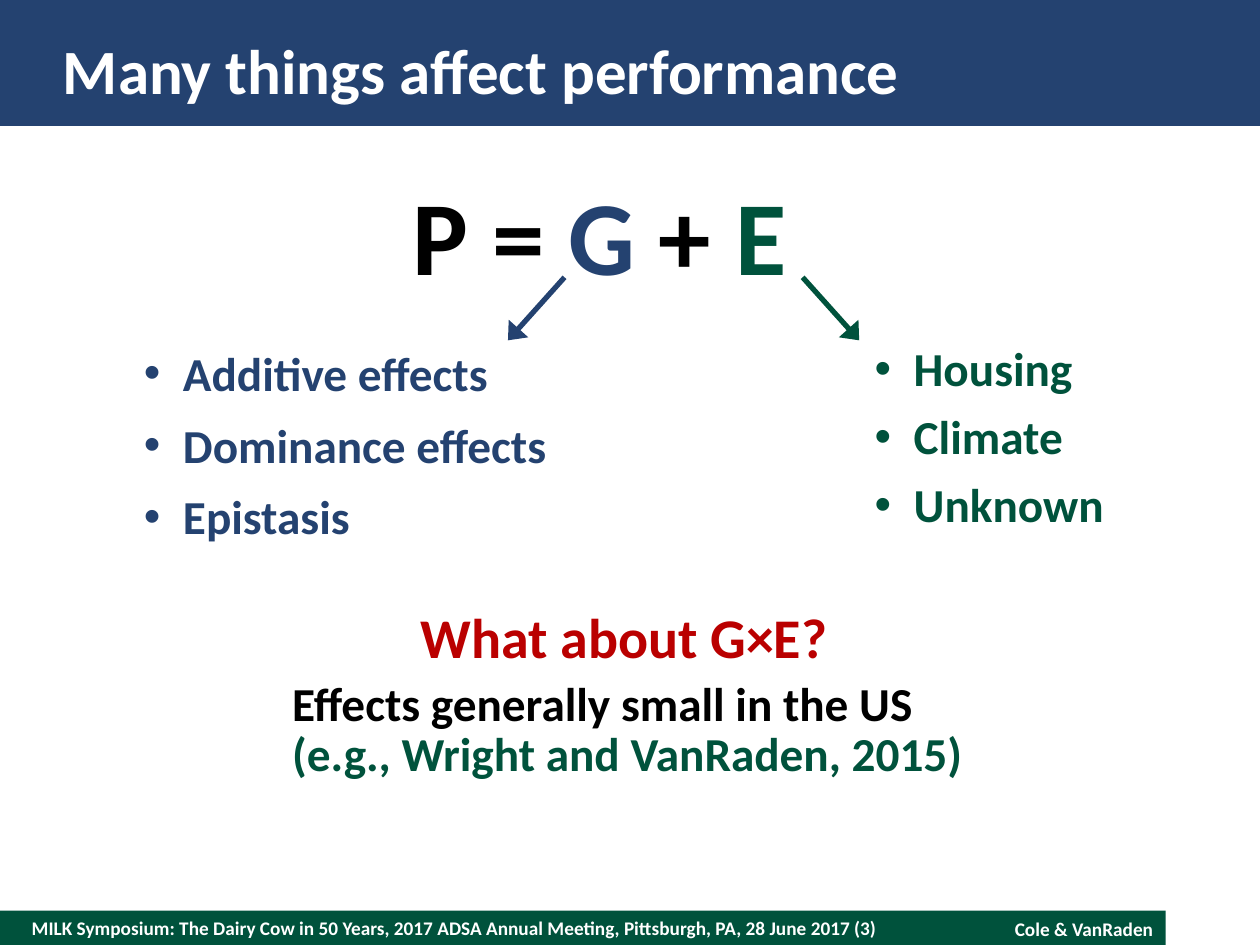
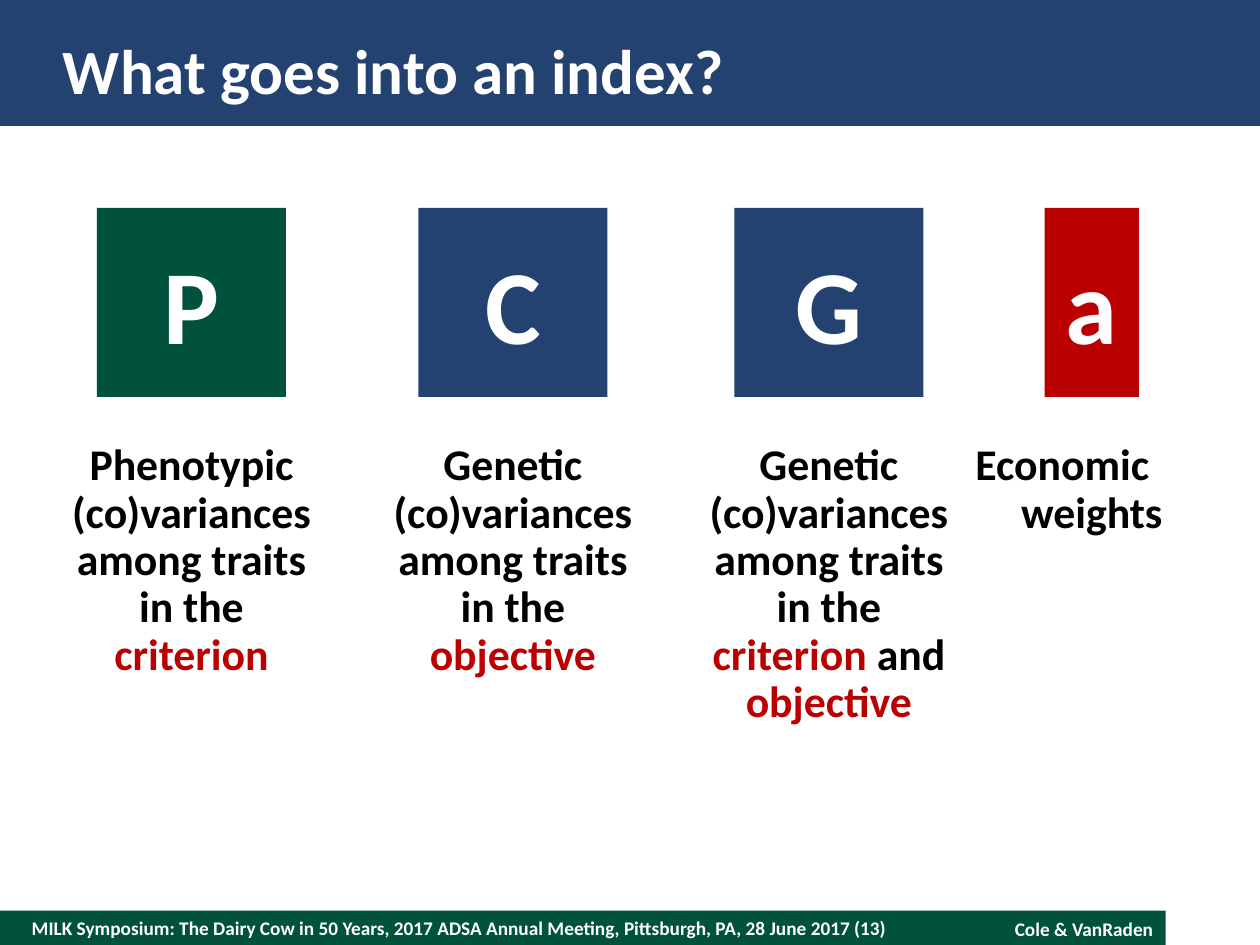
import pptx
import pptx.util
from pptx.dml.color import RGBColor
from pptx.enum.shapes import MSO_CONNECTOR, MSO_SHAPE
from pptx.enum.text import MSO_ANCHOR, PP_ALIGN
from pptx.oxml.ns import qn
from lxml import etree

Cm, Pt = pptx.util.Cm, pptx.util.Pt

FONT = "Calibri"
COLOURS = {
    "blue": "244270",
    "green": "00523C",
    "red": "BA0000",
    "black": "000000",
    "white": "FFFFFF",
}

# Content: a paragraph is a list of (words, colour) runs
EVENT = ("MILK Symposium: The Dairy Cow in 50 Years, 2017 ADSA Annual Meeting, "
         "Pittsburgh, PA, 28 June 2017 ({})")
AUTHORS = "Cole & VanRaden"

PERFORMANCE = {"title": "Many things affect performance", "number": 3}
FORMULA = [("P = ", "black"), ("G", "blue"), (" + ", "black"), ("E", "green")]
# Each factor: box, colour, line pitches, arrow from and to, effects
FACTORS = [
    ((2.26, 6.81, 9.5, 4.57), "blue", (29, 29, 29), (11.38, 5.59, 10.24, 6.86),
     ["Additive effects", "Dominance effects", "Epistasis"]),
    ((16.99, 6.71, 7, 4.57), "green", (29, 27, 27), (16.18, 5.59, 17.32, 6.86),
     ["Housing", "Climate", "Unknown"]),
]
INTERACTION = [("What about G×E? ", "red")]
FINDING = [("Effects generally small in the US ", "black"),
           ("(e.g., Wright and VanRaden, 2015)", "green")]

INDEX = {"title": "What goes into an index?", "number": 13}
COVARIANCES = "(co)variances among traits in the "
# Each term: symbol, colour, centre, width, caption
TERMS = [
    ("P", "green", 3.86, 3.81,
     [("Phenotypic " + COVARIANCES, "black"), ("criterion", "red")]),
    ("C", "blue", 10.34, 3.81,
     [("Genetic " + COVARIANCES, "black"), ("objective", "red")]),
    ("G", "blue", 16.71, 3.81,
     [("Genetic " + COVARIANCES, "black"), ("criterion ", "red"),
      ("and ", "black"), ("objective", "red")]),
    ("a", "red", 22.01, 1.9, [("Economic weights", "black")]),
]
TERM_TOP, TERM_HEIGHT = 4.19, 3.81
CAPTION_TOP, CAPTION_HEIGHT, CAPTION_WIDTH = 8.79, 6.05, 5.61
WEIGHTS_WIDTH, WEIGHTS_HANG = 4.57, 1.19


def rgb(colour):
    return RGBColor.from_string(COLOURS[colour])


def set_frame(frame, insets, anchor=MSO_ANCHOR.TOP):
    """Set wrapping, anchor and the (horizontal, vertical) insets."""
    across, down = (Cm(inset) for inset in insets)
    values = {"word_wrap": True, "vertical_anchor": anchor,
              "margin_left": across, "margin_right": across,
              "margin_top": down, "margin_bottom": down}
    for name, value in values.items():
        setattr(frame, name, value)


def fill_paragraph(paragraph, runs, size, hang=0, bullet=False, **layout):
    """Write runs; hang is the hanging indent in cm, layout the spacing."""
    if hang:
        properties = paragraph._p.get_or_add_pPr()
        properties.set("marL", str(Cm(hang)))
        properties.set("indent", str(-Cm(hang)))
        if bullet:
            etree.SubElement(properties, qn("a:buFont")).set("typeface", "Arial")
            etree.SubElement(properties, qn("a:buChar")).set("char", "•")
    for name, value in layout.items():
        setattr(paragraph, name, value)
    for words, colour in runs:
        run = paragraph.add_run()
        run.text = words
        for name, value in {"name": FONT, "size": Pt(size), "bold": True}.items():
            setattr(run.font, name, value)
        run.font.color.rgb = rgb(colour)


def add_text(slide, box, paragraphs, insets=(0.25, 0.13), anchor=MSO_ANCHOR.TOP):
    """Add a text box; each paragraph is a dict for fill_paragraph."""
    frame = slide.shapes.add_textbox(*map(Cm, box)).text_frame
    set_frame(frame, insets, anchor)
    for i, paragraph in enumerate(paragraphs):
        target = frame.add_paragraph() if i else frame.paragraphs[0]
        fill_paragraph(target, **paragraph)


def add_block(slide, box, colour):
    block = slide.shapes.add_shape(MSO_SHAPE.RECTANGLE, *map(Cm, box))
    block.shadow.inherit = False
    block.fill.solid()
    block.fill.fore_color.rgb = rgb(colour)
    block.line.fill.background()
    return block


def add_arrow(slide, ends, colour):
    arrow = slide.shapes.add_connector(MSO_CONNECTOR.STRAIGHT, *map(Cm, ends))
    arrow.line.color.rgb = rgb(colour)
    arrow.line.width = Pt(3)
    head = etree.SubElement(arrow.line._get_or_add_ln(), qn("a:tailEnd"))
    for name, value in {"type": "triangle", "w": "lg", "len": "med"}.items():
        head.set(name, value)
    etree.SubElement(arrow._element.spPr, qn("a:effectLst"))


def add_base_slide(deck, title, number):
    """Add a slide with the title band and the footer."""
    slide = deck.slides.add_slide(deck.slide_layouts[6])
    add_block(slide, (0, 18.36, 23.5, 0.69), "green")
    add_block(slide, (0, 0, 25.4, 2.54), "blue")
    add_text(slide, (0.64, 18.36, 17.78, 0.69),
             [dict(runs=[(EVENT.format(number), "white")], size=11)],
             (0, 0), MSO_ANCHOR.MIDDLE)
    add_text(slide, (18.42, 18.36, 5.08, 0.73),
             [dict(runs=[(AUTHORS, "white")], size=11, alignment=PP_ALIGN.RIGHT)])
    add_text(slide, (1.27, 0.51, 22.86, 1.78),
             [dict(runs=[(title, "white")], size=36)], (0, 0), MSO_ANCHOR.MIDDLE)
    return slide


def add_performance(deck):
    slide = add_base_slide(deck, **PERFORMANCE)
    add_text(slide, (8.07, 3.3, 10, 2.39), [dict(runs=FORMULA, size=60)])
    for box, colour, pitches, ends, effects in FACTORS:
        add_text(slide, box, [
            dict(runs=[(effect, colour)], size=27, hang=0.79, bullet=True,
                 line_spacing=Pt(pitch), space_after=Pt(12))
            for effect, pitch in zip(effects, pitches)], (0.64, 0.25))
        add_arrow(slide, ends, colour)
    add_text(slide, (5.89, 12.47, 13.64, 3.3), [
        dict(runs=INTERACTION, size=32, alignment=PP_ALIGN.CENTER,
             line_spacing=Pt(29), space_after=Pt(6)),
        dict(runs=FINDING, size=27, line_spacing=Pt(29)),
    ], (0, 0))


def add_index(deck):
    slide = add_base_slide(deck, **INDEX)
    for symbol, colour, centre, width, caption in TERMS:
        block = add_block(slide, (centre - width / 2, TERM_TOP, width, TERM_HEIGHT), colour)
        set_frame(block.text_frame, (0, 0), MSO_ANCHOR.MIDDLE)
        fill_paragraph(block.text_frame.paragraphs[0], [(symbol, "white")], 60,
                       alignment=PP_ALIGN.CENTER)
        # The weights caption steps its second line to the right
        is_weights = symbol == "a"
        hang = WEIGHTS_HANG if is_weights else 0
        span = WEIGHTS_WIDTH if is_weights else CAPTION_WIDTH
        add_text(slide, (centre - span / 2 - hang, CAPTION_TOP, span + hang, CAPTION_HEIGHT),
                 [dict(runs=caption, size=25, hang=hang, alignment=PP_ALIGN.CENTER,
                       line_spacing=Pt(27))])


def main():
    deck = pptx.Presentation()
    deck.slide_width, deck.slide_height = Cm(25.4), Cm(19.05)
    add_performance(deck)
    add_index(deck)
    deck.save("out.pptx")


if __name__ == "__main__":
    main()
